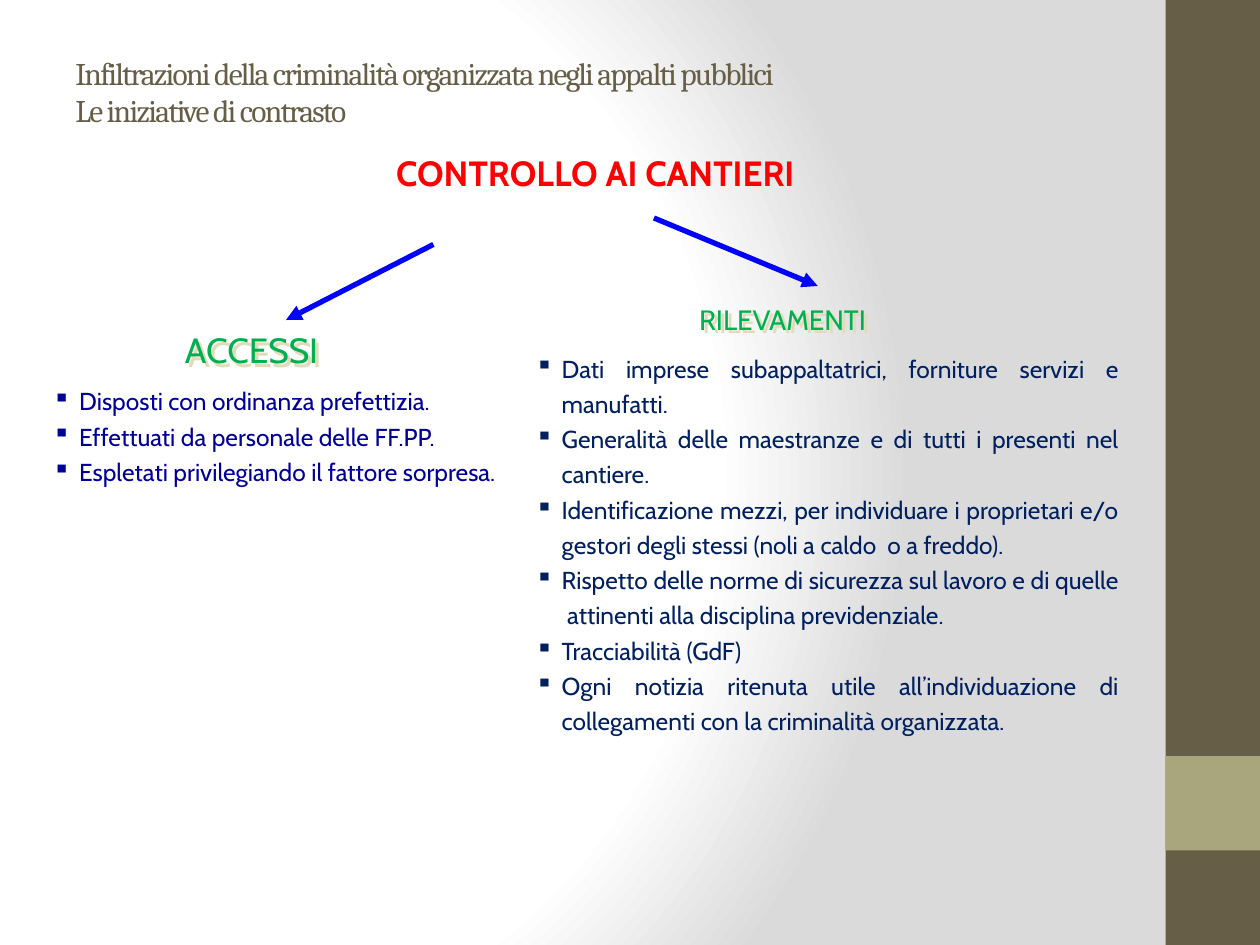
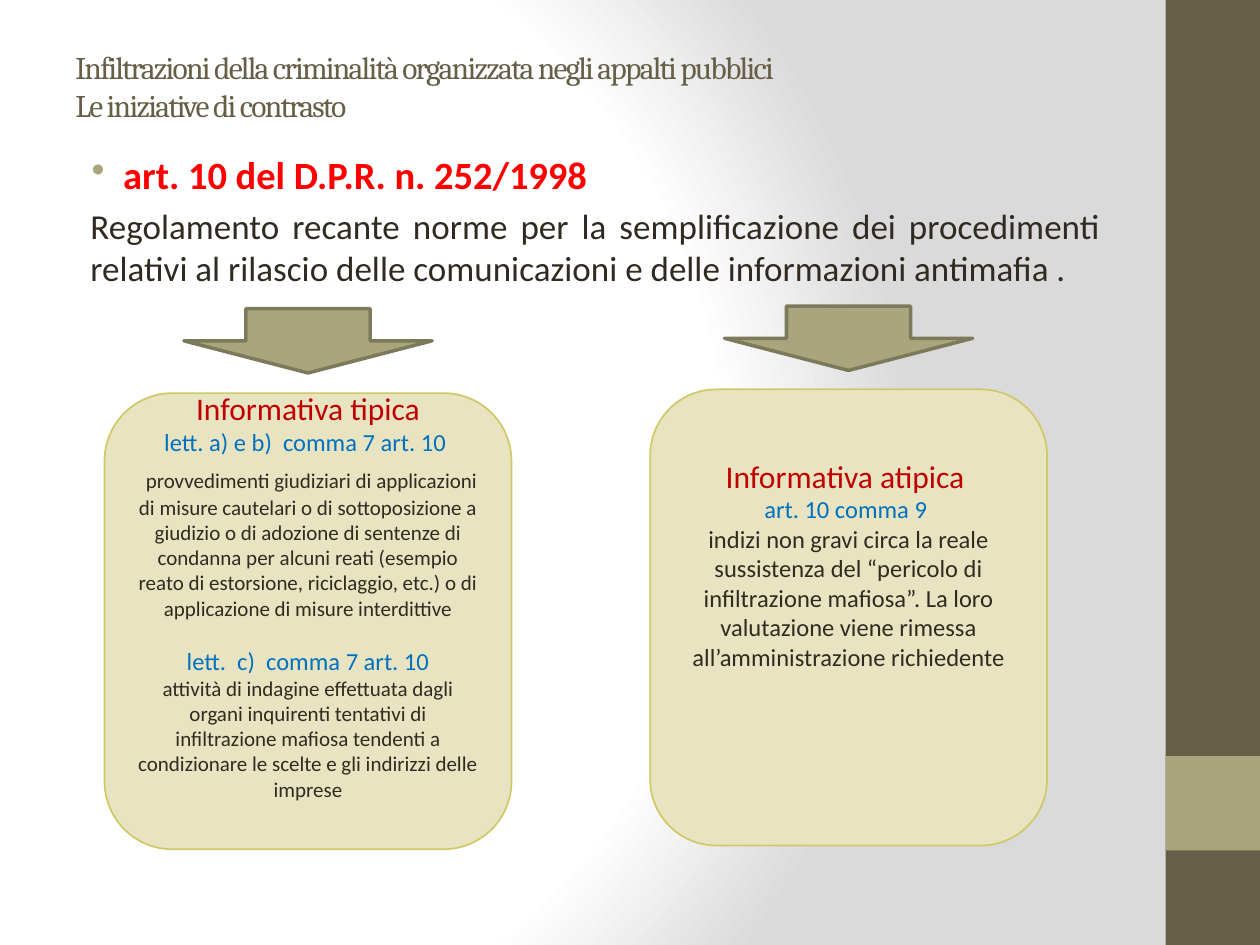
from lxml import etree
from pptx import Presentation
from pptx import util as u
from pptx.dml.color import RGBColor
from pptx.enum import shapes, text
from pptx.oxml import parse_xml
from pptx.oxml.ns import nsdecls, qn

COLOURS = {
    "white": "FFFFFF", "grey": "DADADA", "brown": "675E47", "olive": "A9A57C",
    "olive_edge": "7D7A5C", "cream": "E8E4C1", "cream_edge": "D0C967",
    "shade": "DFDCB7", "red": "FF0000", "dark_red": "C00000", "green": "00B050",
    "blue": "0000FF", "navy": "000099", "deep_blue": "002060",
    "sky": "0070C0", "ink": "2F2B20",
}
RGB = {name: RGBColor.from_string(code) for name, code in COLOURS.items()}

# Text looks: colour name and font values
LOOKS = {
    "title": ("brown", {"name": "Cambria", "size": u.Pt(18)}),
    "topic": ("red", {"name": "Cabin", "size": u.Pt(20), "bold": True}),
    "access": ("green", {"name": "Cabin", "size": u.Pt(20)}),
    "survey": ("green", {"name": "Cabin", "size": u.Pt(16)}),
    "access_item": ("navy", {"name": "Cabin", "size": u.Pt(14)}),
    "survey_item": ("deep_blue", {"name": "Cabin", "size": u.Pt(14)}),
    "article": ("red", {"name": "Calibri", "size": u.Pt(22), "bold": True}),
    "rule": ("ink", {"name": "Calibri", "size": u.Pt(20)}),
    "notice": ("dark_red", {"name": "Calibri", "size": u.Pt(18)}),
    "clause": ("sky", {"name": "Calibri", "size": u.Pt(14)}),
    "lead": ("ink", {"name": "Calibri", "size": u.Pt(18)}),
    "small": ("ink", {"name": "Calibri", "size": u.Pt(12)}),
    "medium": ("ink", {"name": "Calibri", "size": u.Pt(14)}),
}
CENTRE, JUSTIFY = text.PP_ALIGN.CENTER, text.PP_ALIGN.JUSTIFY
MIDDLE = text.MSO_ANCHOR.MIDDLE
GROW = text.MSO_AUTO_SIZE.SHAPE_TO_FIT_TEXT

deck = Presentation()
deck.slide_width, deck.slide_height = u.Inches(10), u.Inches(7.5)
COL, ROW = deck.slide_width / 100, deck.slide_height / 75


def grid(left, top, *more):
    """Turn column and row numbers into slide lengths."""
    return [round(n * (ROW if i % 2 else COL)) for i, n in enumerate((left, top, *more))]


def write(box, paras, frame_format):
    """Fill a box with paragraphs of (look, text) spans and their format."""
    frame = box.text_frame
    for key, value in {"word_wrap": True, **frame_format}.items():
        setattr(frame, key, value)
    for i, (spans, para_format) in enumerate(paras):
        para = frame.add_paragraph() if i else frame.paragraphs[0]
        para_format = dict(para_format)
        bullet, bullet_colour = para_format.pop("bullet", (None, None))
        margin, indent = para_format.pop("indent", (0, 0))
        for key, value in para_format.items():
            setattr(para, key, value)
        props = para._p.get_or_add_pPr()
        props.set("marL", str(u.Inches(margin)))
        props.set("indent", str(u.Inches(indent)))
        if bullet_colour:
            tint = etree.SubElement(props, qn("a:buClr"))
            etree.SubElement(tint, qn("a:srgbClr"), val=COLOURS[bullet_colour])
        if bullet:
            etree.SubElement(props, qn("a:buChar"), char=bullet)
        for look, words in spans:
            colour, font_format = LOOKS[look]
            for n, line in enumerate(words.split("\n")):
                if n:
                    para.add_line_break()
                span = para.add_run()
                span.text = line
                span.font.color.rgb = RGB[colour]
                for key, value in font_format.items():
                    setattr(span.font, key, value)
                if look == "title":
                    span.font._element.set("spc", "-100")


# Shared background, side bands and title
TITLE = ("Infiltrazioni della criminalità organizzata negli appalti pubblici \n"
         "Le iniziative di contrasto")
BANDS = [("brown", (92.5, 0, 7.5, 75)), ("olive", (92.5, 60, 7.5, 7.5))]
STOPS = "".join(f'<a:gs pos="{share}000"><a:srgbClr val="{COLOURS[colour]}"/></a:gs>'
                for share, colour in ((0, "white"), (75, "white"), (100, "grey")))
BACKGROUND = (f'<a:gradFill {nsdecls("a")} rotWithShape="1"><a:gsLst>{STOPS}</a:gsLst>'
              '<a:path path="circle"><a:fillToRect l="20000" t="50000" r="100000" b="50000"/>'
              '</a:path></a:gradFill>')

pages = []
for title_height in (8.5, 7.7):
    page = deck.slides.add_slide(deck.slide_layouts[6])
    page.background.fill.solid()
    solid = page._element.find(".//" + qn("p:bgPr")).find(qn("a:solidFill"))
    solid.getparent().replace(solid, parse_xml(BACKGROUND))
    for colour, place in BANDS:
        band = page.shapes.add_shape(shapes.MSO_SHAPE.RECTANGLE, *grid(*place))
        band.shadow.inherit = False
        band.fill.solid()
        band.fill.fore_color.rgb = RGB[colour]
        band.line.fill.background()
    box = page.shapes.add_textbox(*grid(5, 3, 83.3, title_height))
    write(box, [([("title", TITLE)], {})], {"vertical_anchor": MIDDLE})
    pages.append(page)
sites, notices = pages
BODY = grid(5, 11.5, 83.3, 58.5)

# Slide 1: site checks
write(sites.shapes.add_textbox(*BODY),
      [([("topic", "CONTROLLO AI CANTIERI")], {"alignment": CENTRE, "indent": (0.12, 0)})], {})

ITEM = {"line_spacing": 1.2, "indent": (0.21, -0.21), "bullet": ("▪", None)}
BRANCHES = [
    ("access", "ACCESSI", (13.7, 25.6, 12.7, 4.3), (3.2, 29.7, 39.2, 9.4),
     (34.4, 19.4, 22.7, 25.4), False, ITEM, [
         "Disposti con ordinanza prefettizia.",
         "Effettuati da personale delle FF.PP.",
         "Espletati privilegiando il fattore sorpresa."]),
    ("survey", "RILEVAMENTI", (54.5, 23.5, 15.9, 3.7), (41.5, 27.1, 48.3, 32.1),
     (51.9, 17.3, 64.9, 22.7), True, {**ITEM, "alignment": JUSTIFY}, [
         "Dati imprese subappaltatrici, forniture servizi e manufatti.",
         "Generalità delle maestranze e di tutti i presenti nel cantiere.",
         "Identificazione mezzi, per individuare i proprietari e/o gestori degli stessi "
         "(noli a caldo  o a freddo).",
         "Rispetto delle norme di sicurezza sul lavoro e di quelle  attinenti alla "
         "disciplina previdenziale.",
         "Tracciabilità (GdF)",
         "Ogni notizia ritenuta utile all’individuazione di collegamenti con la "
         "criminalità organizzata."]),
]
HEADING_SHADOW = (f'<a:effectLst {nsdecls("a")}><a:outerShdw dist="36000" dir="2700000">'
                  f'<a:srgbClr val="{COLOURS["shade"]}"/></a:outerShdw></a:effectLst>')

for look, heading, heading_place, list_place, ends, wrap, item_format, items in BRANCHES:
    box = sites.shapes.add_textbox(*grid(*list_place))
    write(box, [([(look + "_item", item)], item_format) for item in items],
          {"word_wrap": wrap, "auto_size": GROW})
    box = sites.shapes.add_textbox(*grid(*heading_place))
    write(box, [([(look, heading)], {})], {"word_wrap": False, "auto_size": GROW})
    box._element.spPr.append(parse_xml(HEADING_SHADOW))
    arrow = sites.shapes.add_connector(shapes.MSO_CONNECTOR.STRAIGHT, *grid(*ends))
    arrow.line.color.rgb = RGB["blue"]
    arrow.line.width = u.Pt(3)
    etree.SubElement(arrow.line._get_or_add_ln(), qn("a:tailEnd"), type="triangle")
    etree.SubElement(arrow._element.spPr, qn("a:effectLst"))

# Slide 2: the regulation
write(notices.shapes.add_textbox(*BODY), [
    ([("article", "art. 10 del D.P.R. n. 252/1998")],
     {"indent": (0.38, -0.25), "bullet": ("•", "olive")}),
    ([("rule", "Regolamento recante norme per la semplificazione dei procedimenti relativi "
               "al rilascio delle comunicazioni e delle informazioni antimafia .")],
     {"alignment": JUSTIFY, "indent": (0.12, 0), "space_before": u.Pt(4)}),
], {})

# Slide 2: the two kinds of notice, each with its arrow
MID = {"alignment": CENTRE}
TYPICAL = [
    ([("notice", "Informativa tipica")], MID),
    ([("clause", "lett. a) e b)  comma 7 art. 10 ")], MID),
    ([("lead", " "),
      ("small", "provvedimenti giudiziari di applicazioni di misure cautelari o di "
                "sottoposizione a giudizio o di adozione di sentenze di condanna per alcuni "
                "reati (esempio reato di estorsione, riciclaggio, etc.) o di applicazione "
                "di misure interdittive")], MID),
    ([("clause", "lett.  c)  comma 7 art. 10")], {**MID, "space_before": u.Pt(14.6)}),
    ([("small", "attività di indagine effettuata dagli organi inquirenti tentativi di "
                "infiltrazione mafiosa tendenti a condizionare le scelte e gli indirizzi "
                "delle imprese")], MID),
]
ATYPICAL = [
    ([("notice", "Informativa atipica ")], MID),
    ([("clause", "art. 10 comma 9 ")], MID),
    ([("medium", "indizi non gravi circa la reale sussistenza del “pericolo di "
                 "infiltrazione mafiosa”. La loro valutazione viene rimessa "
                 "all’amministrazione richiedente")], MID),
]
CARD, DOWN = shapes.MSO_SHAPE.FLOWCHART_ALTERNATE_PROCESS, shapes.MSO_SHAPE.DOWN_ARROW
NOTICES = [
    (TYPICAL, 0.46, (8.3, 31.2, 32.3, 36.2), (14.6, 24.5, 19.7, 5.1)),
    (ATYPICAL, 0.9, (51.6, 30.9, 31.5, 36.2), (57.5, 24.3, 19.7, 5.1)),
]
for paras, bottom, card_place, arrow_place in NOTICES:
    for kind, place, fill, edge, weight in (
            (CARD, card_place, "cream", "cream_edge", 1),
            (DOWN, arrow_place, "olive", "olive_edge", 2)):
        shape = notices.shapes.add_shape(kind, *grid(*place))
        shape.shadow.inherit = False
        shape.fill.solid()
        shape.fill.fore_color.rgb = RGB[fill]
        shape.line.color.rgb = RGB[edge]
        shape.line.width = u.Pt(weight)
        if kind == CARD:
            write(shape, paras, {"vertical_anchor": MIDDLE, "margin_bottom": u.Inches(bottom)})

deck.save("out.pptx")
